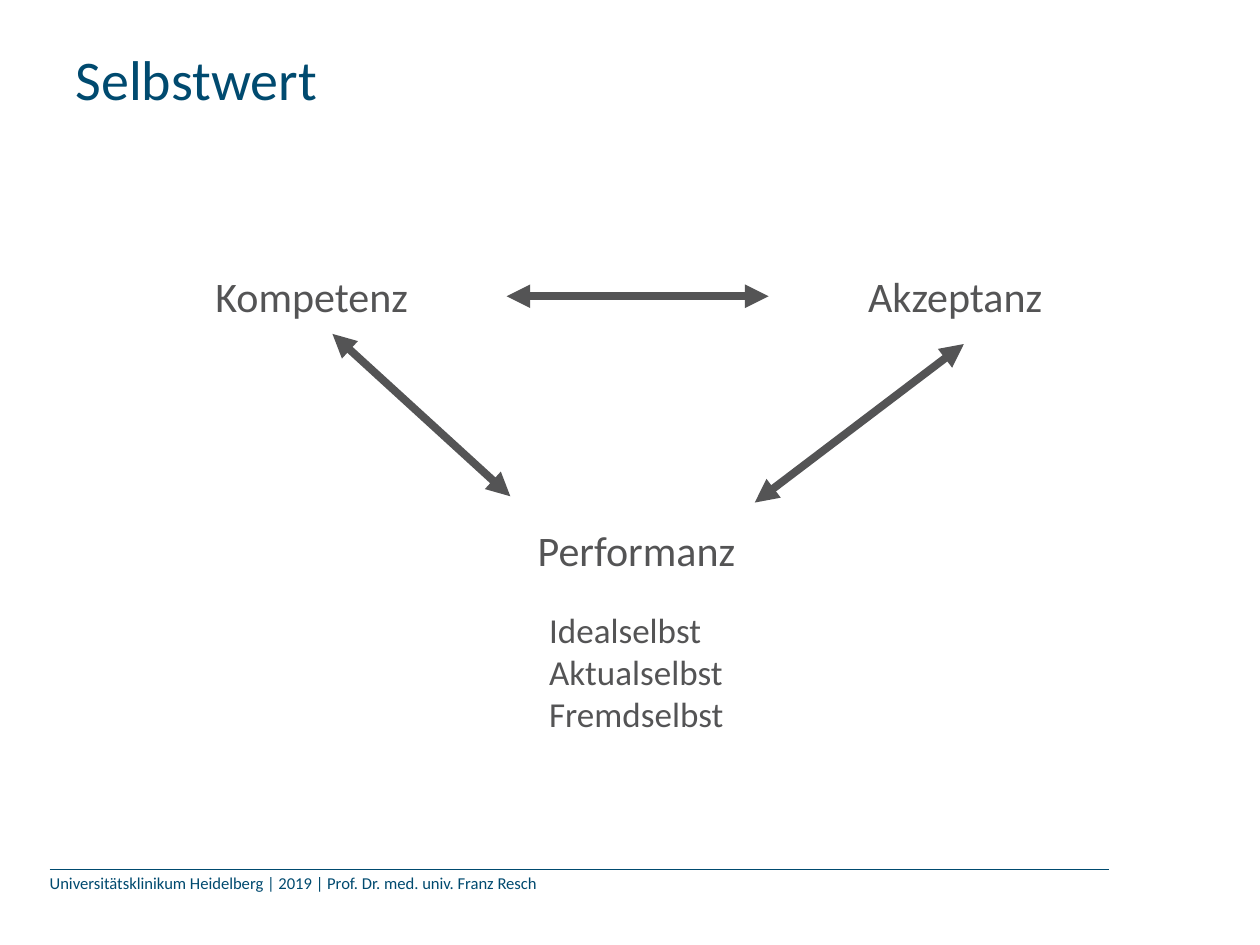
from lxml import etree
from pptx import Presentation
from pptx import util as u
from pptx.dml.color import RGBColor
from pptx.enum import shapes, text
from pptx.oxml.ns import qn

COLORS = {"blue": "004A6F", "gray": "545455"}
FONT = "Calibri"


def write_text(shape, lines, size, color, margins=None, wrap=True):
    frame = shape.text_frame
    frame.word_wrap = wrap
    frame.auto_size = text.MSO_AUTO_SIZE.NONE
    frame.vertical_anchor = text.MSO_ANCHOR.TOP
    if margins is not None:
        frame.margin_left = frame.margin_right = u.Pt(margins)
        frame.margin_top = frame.margin_bottom = u.Pt(margins)
    for index, line in enumerate(lines):
        paragraph = frame.add_paragraph() if index else frame.paragraphs[0]
        paragraph.alignment = text.PP_ALIGN.LEFT
        run = paragraph.add_run()
        run.text = line
        run.font.name = FONT
        run.font.size = u.Pt(size)
        run.font.color.rgb = RGBColor.from_string(COLORS[color])


def add_line(slide, start, end, width, color, arrows=False):
    points = [u.Pt(value) for value in (*start, *end)]
    connector = slide.shapes.add_connector(shapes.MSO_CONNECTOR.STRAIGHT, *points)
    connector.line.width = u.Pt(width)
    connector.line.color.rgb = RGBColor.from_string(COLORS[color])
    if arrows:
        outline = connector.line._get_or_add_ln()
        for tag in ("a:headEnd", "a:tailEnd"):
            etree.SubElement(outline, qn(tag), type="triangle")
    etree.SubElement(connector._element.spPr, qn("a:effectLst"))


presentation = Presentation()
presentation.slide_width = u.Pt(720)
presentation.slide_height = u.Pt(540)
slide = presentation.slides.add_slide(presentation.slide_layouts[5])

title = slide.shapes.title
title.left, title.top = u.Pt(36), u.Pt(21.6)
title.width, title.height = u.Pt(648), u.Pt(90)
write_text(title, ["Selbstwert"], 32, "blue")

add_line(slide, (28.4, 496.8), (633.6, 496.8), 0.75, "blue")
footer = slide.shapes.add_textbox(u.Pt(28.4), u.Pt(499), u.Pt(566.6), u.Pt(11.6))
write_text(
    footer,
    ["Universitätsklinikum Heidelberg | 2019 | Prof. Dr. med. univ. Franz Resch"],
    9.5, "blue", margins=0,
)

labels = [
    (["Kompetenz"], 24, 116, 151.2, 126, 36),
    (["Akzeptanz"], 24, 489, 151.2, 115, 36),
    (["Performanz"], 24, 300.2, 296, 129, 36),
    (["Idealselbst", "Aktualselbst", "Fremdselbst"], 20, 306.7, 344.2, 115, 80),
]
for lines, size, left, top, width, height in labels:
    label = slide.shapes.add_textbox(u.Pt(left), u.Pt(top), u.Pt(width), u.Pt(height))
    write_text(label, lines, size, "gray", wrap=False)

arrows = [
    ((289.5, 169.3), (439.2, 169.3)),
    ((291.6, 283.6), (190, 190.8)),
    ((550.8, 196.6), (431.3, 287.2)),
]
for start, end in arrows:
    add_line(slide, start, end, 4.5, "gray", arrows=True)

presentation.save("out.pptx")
